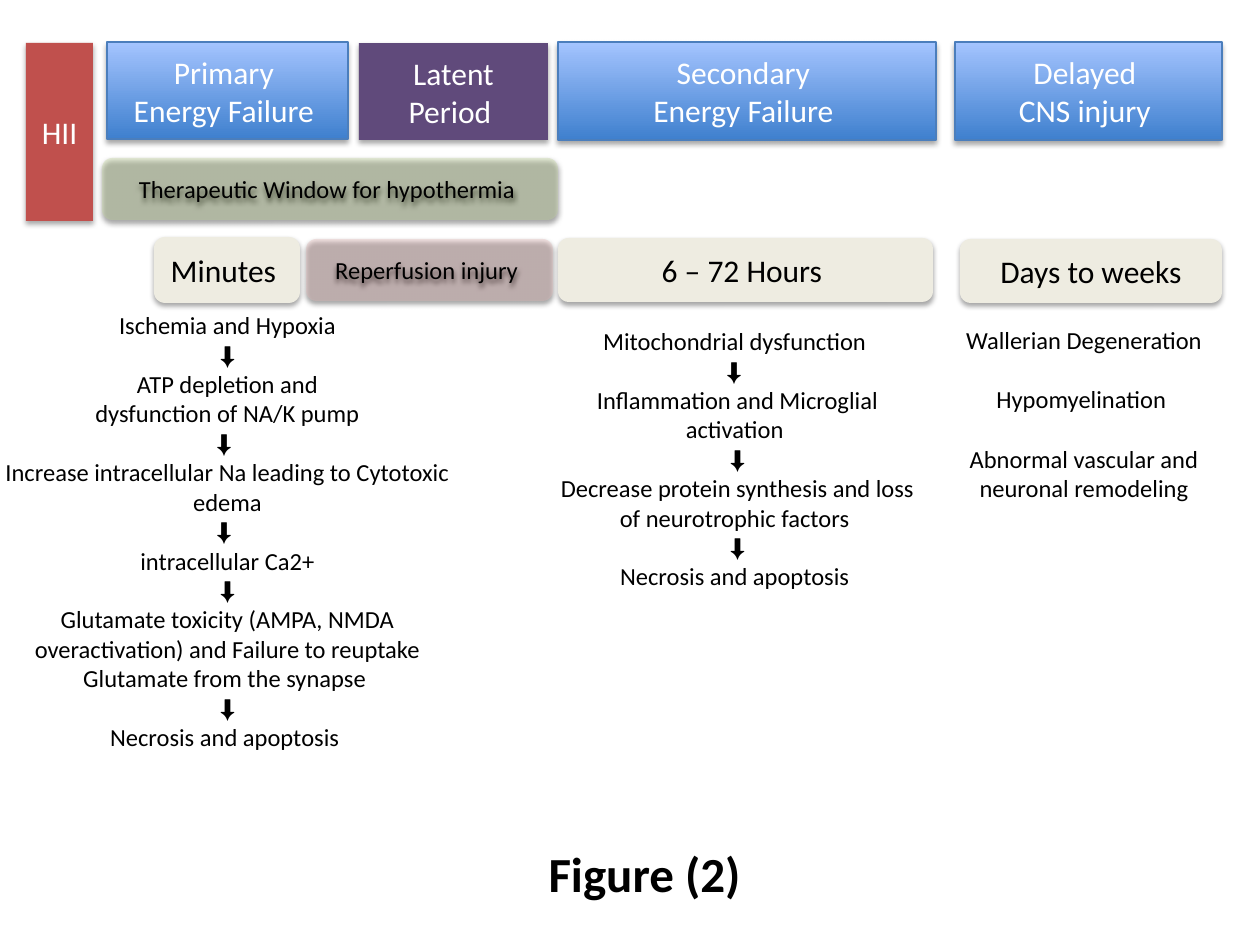
from pptx import Presentation
from pptx.dml.color import RGBColor
from pptx.enum.shapes import MSO_SHAPE as Shape
from pptx.enum.text import MSO_ANCHOR as Anchor, MSO_AUTO_SIZE as AutoSize, PP_ALIGN as Align
from pptx.oxml.ns import qn
from pptx.util import Emu, Pt
from lxml.etree import SubElement

PX = 914400 / 126
ARROW = "⬇"
WHITE, BLACK, CREAM = "FFFFFF", "000000", "EEECE1"
BLUE_DARK, BLUE_LIGHT, BLUE_LINE = "3F80CE", "A4C4FF", "4B7EBC"


def px(length):
    return Emu(round(length * PX))


def rgb(value):
    return RGBColor.from_string(value)


def write_text(frame, lines, size=14, color=BLACK, bold=False, gap=0):
    """Write one centred paragraph per line; arrows use Arial."""
    frame.word_wrap = True
    for index, line in enumerate(lines):
        paragraph = frame.paragraphs[0] if index == 0 else frame.add_paragraph()
        paragraph.alignment = Align.CENTER
        if index:
            paragraph.space_before = Pt(gap)
        run = paragraph.add_run()
        run.text = line
        font = run.font
        font.name = "Arial" if ARROW in line else "Calibri"
        font.size, font.bold = Pt(size), bold
        font.color.rgb = rgb(color)


def add_shadow(shape):
    shape.shadow.inherit = False
    effects = shape._element.spPr.find(qn("a:effectLst"))
    outer = SubElement(effects, qn("a:outerShdw"), blurRad=str(Pt(3.1)),
                       dist=str(Pt(1.8)), dir="5400000", rotWithShape="0")
    color = SubElement(outer, qn("a:srgbClr"), val=BLACK)
    SubElement(color, qn("a:alpha"), val="35000")


def add_box(slide, box, lines, kind=Shape.RECTANGLE, fill=None, opacity=100, **text_format):
    """Add a shadowed box; without a fill colour it gets the blue gradient."""
    shape = slide.shapes.add_shape(kind, *map(px, box))
    if fill:
        shape.fill.solid()
        shape.fill.fore_color.rgb = rgb(fill)
        shape.line.fill.background()
        if opacity < 100:
            color = shape._element.spPr.find(qn("a:solidFill"))[0]
            SubElement(color, qn("a:alpha"), val=str(opacity * 1000))
    else:
        shape.fill.gradient()
        shape.fill.gradient_angle = 90
        for stop, color in zip(shape.fill.gradient_stops, (BLUE_DARK, BLUE_LIGHT)):
            stop.color.rgb = rgb(color)
        shape.line.color.rgb = rgb(BLUE_LINE)
        shape.line.width = Pt(0.75)
    add_shadow(shape)
    shape.text_frame.vertical_anchor = Anchor.MIDDLE
    write_text(shape.text_frame, lines, **text_format)


def add_label(slide, box, lines, **text_format):
    frame = slide.shapes.add_textbox(*map(px, box)).text_frame
    write_text(frame, lines, **text_format)
    frame.auto_size = AutoSize.SHAPE_TO_FIT_TEXT


def main():
    presentation = Presentation()
    presentation.slide_width, presentation.slide_height = px(1260), px(945)
    slide = presentation.slides.add_slide(presentation.slide_layouts[6])

    # Phases
    for box, lines, fill in (
        ((107, 42, 241, 97), ["Primary ", "Energy Failure "], None),
        ((558, 42, 378, 98), ["Secondary ", "Energy Failure "], None),
        ((955, 42, 267, 98), ["Delayed ", "CNS injury "], None),
        ((359, 43, 189, 97), ["Latent Period "], "604A7B"),
        ((26, 43, 67, 178), ["HII"], "C0504D"),
    ):
        add_box(slide, box, lines, fill=fill, size=18, color=WHITE)

    # Durations
    for box, duration in (
        ((154, 237, 146, 66), "Minutes "),
        ((558, 238, 375, 64), "6 – 72 Hours "),
        ((960, 239, 262, 64), " Days to weeks "),
    ):
        add_box(slide, box, [duration], Shape.ROUNDED_RECTANGLE, CREAM, size=18)

    # Mechanisms of each phase
    add_label(slide, (-10, 304, 475, 459), [
        "Ischemia and Hypoxia",
        ARROW,
        " ATP depletion and ",
        "dysfunction of NA/K pump",
        ARROW + " ",
        "Increase intracellular Na leading to Cytotoxic edema",
        ARROW + " ",
        "intracellular Ca2+",
        ARROW,
        "Glutamate toxicity (AMPA, NMDA overactivation) and Failure to reuptake "
        "Glutamate from the synapse ",
        ARROW,
        "Necrosis and apoptosis ",
    ])
    add_label(slide, (539, 320, 397, 280), [
        "Mitochondrial dysfunction ",
        ARROW + " ",
        "Inflammation and Microglial activation ",
        ARROW,
        "Decrease protein synthesis and loss of neurotrophic factors ",
        ARROW,
        "Necrosis and apoptosis ",
    ])
    add_label(slide, (949, 319, 270, 190), [
        "Wallerian Degeneration",
        "Hypomyelination ",
        "Abnormal vascular and neuronal remodeling",
    ], gap=17)

    # Translucent overlays
    for box, line, fill in (
        ((102, 158, 456, 62), "Therapeutic Window for hypothermia ", "C3D69B"),
        ((306, 239, 247, 62), "Reperfusion injury ", "E6B9B8"),
    ):
        add_box(slide, box, [line], Shape.ROUNDED_RECTANGLE, fill, opacity=35)

    # Caption
    add_label(slide, (328, 837, 633, 72), ["Figure (2)"], size=28, bold=True)

    presentation.save("out.pptx")


if __name__ == "__main__":
    main()
